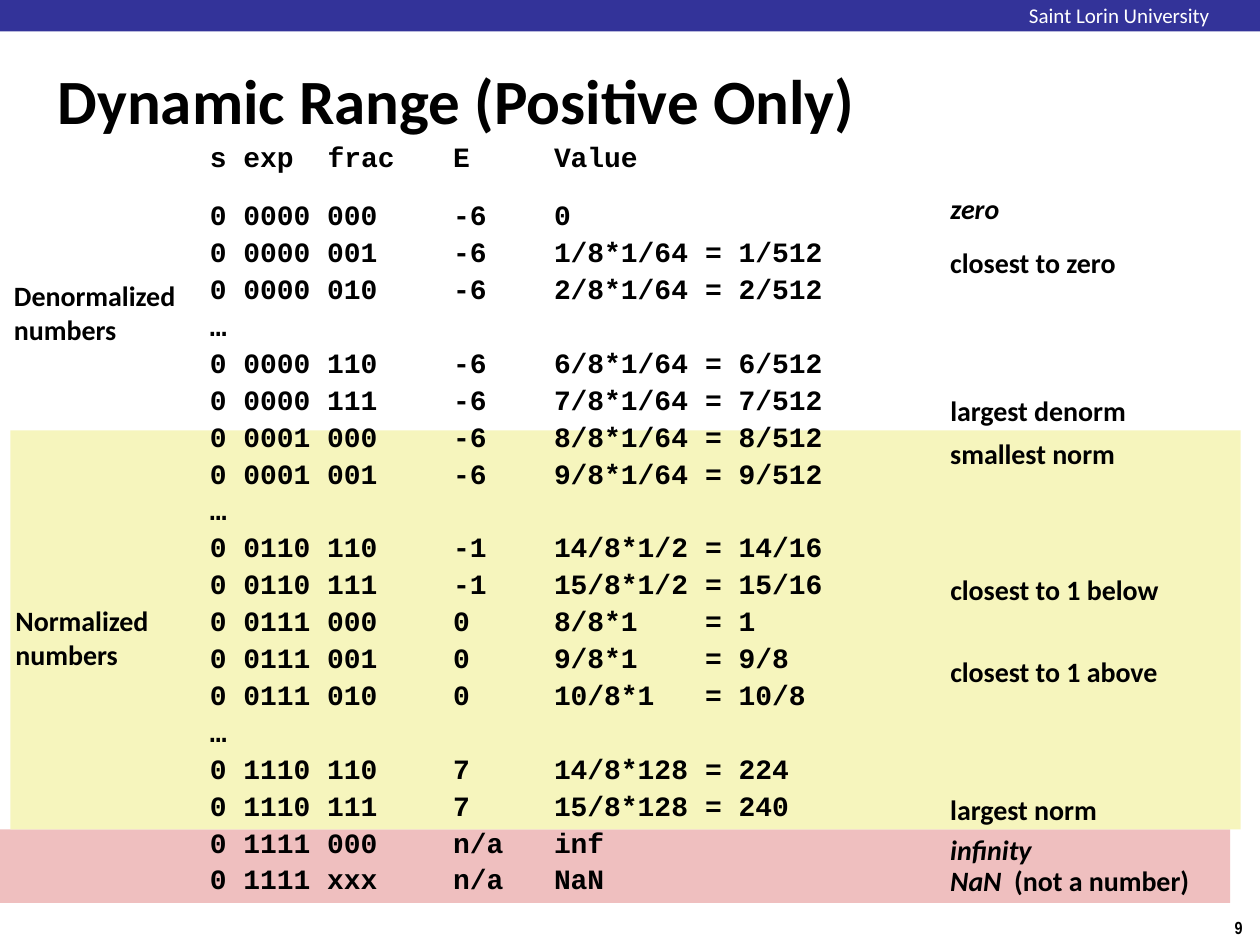
from lxml import etree
from pptx import Presentation
from pptx.dml.color import RGBColor
from pptx.enum.shapes import MSO_SHAPE
from pptx.enum.text import MSO_ANCHOR, MSO_AUTO_SIZE, PP_ALIGN
from pptx.oxml.ns import qn
from pptx.util import Pt

RECTANGLE = MSO_SHAPE.RECTANGLE
LEFT, CENTER = PP_ALIGN.LEFT, PP_ALIGN.CENTER
MIDDLE, TOP = MSO_ANCHOR.MIDDLE, MSO_ANCHOR.TOP
GROW, FIXED = MSO_AUTO_SIZE.SHAPE_TO_FIT_TEXT, MSO_AUTO_SIZE.NONE

BLACK = RGBColor(0x00, 0x00, 0x00)
WHITE = RGBColor(0xFF, 0xFF, 0xFF)
HEADER_BLUE = RGBColor(0x33, 0x33, 0x99)
SPECIAL_PINK = RGBColor(0xEF, 0xBF, 0xBF)
NORMALIZED_YELLOW = RGBColor(0xF6, 0xF5, 0xBD)

# frac (header row only), E, Value and equals-sign columns
TAB_STOPS = (67.2, 139, 196.6, 283)
ROWS = (
    "s exp\tfrac\tE\tValue",
    "0 0000 000\t-6\t0",
    "0 0000 001\t-6\t1/8*1/64\t= 1/512",
    "0 0000 010\t-6\t2/8*1/64\t= 2/512",
    "…",
    "0 0000 110\t-6\t6/8*1/64\t= 6/512",
    "0 0000 111\t-6\t7/8*1/64\t= 7/512",
    "0 0001 000\t-6\t8/8*1/64\t= 8/512",
    "0 0001 001\t-6\t9/8*1/64\t= 9/512",
    "…",
    "0 0110 110\t-1\t14/8*1/2\t= 14/16",
    "0 0110 111\t-1\t15/8*1/2\t= 15/16",
    "0 0111 000\t0\t8/8*1\t= 1",
    "0 0111 001\t0\t9/8*1\t= 9/8",
    "0 0111 010\t0\t10/8*1\t= 10/8",
    "…",
    "0 1110 110\t7\t14/8*128\t= 224",
    "0 1110 111\t7\t15/8*128\t= 240",
    "0 1111 000\tn/a\tinf",
    "0 1111 xxx\tn/a\tNaN",
)

# italic part, upright part, top, width
REMARKS = (
    ("zero", "", 106.5, 34.6),
    ("", "closest to zero", 137.5, 119.5),
    ("", "largest denorm", 221.8, 123),
    ("", "smallest norm", 246.2, 116),
    ("", "closest to 1 below", 324, 145.5),
    ("", "closest to 1 above", 370.8, 146),
    ("", "largest norm", 450, 103.7),
    ("infinity", "", 472.5, 53.3),
    ("NaN", "  (not a number)", 490.5, 144),
)


def write_text(shape, paragraphs, *, size=16, font="Calibri", color=BLACK, bold=True,
               align=LEFT, anchor=TOP, inset=3, wrap=False, auto_size=GROW):
    """Fill a shape; each paragraph is a list of (text, italic) runs."""
    frame = shape.text_frame
    frame.word_wrap = wrap
    frame.auto_size = auto_size
    frame.vertical_anchor = anchor
    frame.margin_left = frame.margin_right = Pt(inset)
    frame.margin_top = frame.margin_bottom = Pt(inset)
    for index, runs in enumerate(paragraphs):
        paragraph = frame.add_paragraph() if index else frame.paragraphs[0]
        paragraph.alignment = align
        for text, italic in runs:
            run = paragraph.add_run()
            run.text = text
            run.font.name = font
            run.font.size = Pt(size)
            run.font.bold = bold
            run.font.italic = italic
            run.font.color.rgb = color


presentation = Presentation()
presentation.slide_width = Pt(720)
presentation.slide_height = Pt(540)
slide = presentation.slides.add_slide(presentation.slide_layouts[5])
shapes = slide.shapes

# Header bar and the bands behind the special and normalized rows
for left, top, width, height, color in (
    (0, 0, 720, 18, HEADER_BLUE),
    (0, 474, 703, 42, SPECIAL_PINK),
    (6, 246, 703, 228, NORMALIZED_YELLOW),
):
    band = shapes.add_shape(RECTANGLE, Pt(left), Pt(top), Pt(width), Pt(height))
    band.shadow.inherit = False
    band.fill.solid()
    band.fill.fore_color.rgb = color
    band.line.fill.background()

university = shapes.add_textbox(Pt(588), Pt(1.7), Pt(120), Pt(14))
write_text(university, [[("Saint Lorin University", False)]], size=12, color=WHITE,
           bold=False, inset=0, wrap=True, auto_size=FIXED)

title = shapes.title
title.left, title.top, title.width, title.height = Pt(30), Pt(20.3), Pt(660), Pt(73)
write_text(title, [[("Dynamic Range (Positive Only)", False)]], size=36,
           anchor=MIDDLE, wrap=True, auto_size=FIXED)

# Number listing, aligned with tab stops
listing = shapes.add_textbox(Pt(120), Pt(78), Pt(366), Pt(438))
write_text(listing, [[(row, False)] for row in ROWS], font="Courier New",
           inset=0, wrap=True, auto_size=FIXED)
for paragraph in listing.text_frame.paragraphs:
    paragraph.line_spacing = 1.1
listing.text_frame.paragraphs[1].space_before = Pt(12)
for paragraph in listing.text_frame.paragraphs:
    properties = paragraph._p.get_or_add_pPr()
    tab_list = etree.SubElement(properties, qn("a:tabLst"))
    for position in TAB_STOPS:
        etree.SubElement(tab_list, qn("a:tab"), pos=str(Pt(position)), algn="l")

# Remarks on the right
for italic_text, upright_text, top, width in REMARKS:
    remark = shapes.add_textbox(Pt(540), Pt(top), Pt(width), Pt(25))
    runs = [(text, italic) for text, italic in ((italic_text, True), (upright_text, False)) if text]
    write_text(remark, [runs])

# Group names on the left
for name, left, top, width in (("Denormalized", 5, 156.3, 111.5), ("Normalized", 5.8, 342, 93)):
    group_name = shapes.add_textbox(Pt(left), Pt(top), Pt(width), Pt(44.6))
    write_text(group_name, [[(name, False)], [("numbers", False)]])

page_number = shapes.add_textbox(Pt(695.5), Pt(520.5), Pt(24.5), Pt(19.5))
write_text(page_number, [[("9", False)]], size=10, font="Arial Narrow", align=CENTER, inset=3.6)

presentation.save("out.pptx")
